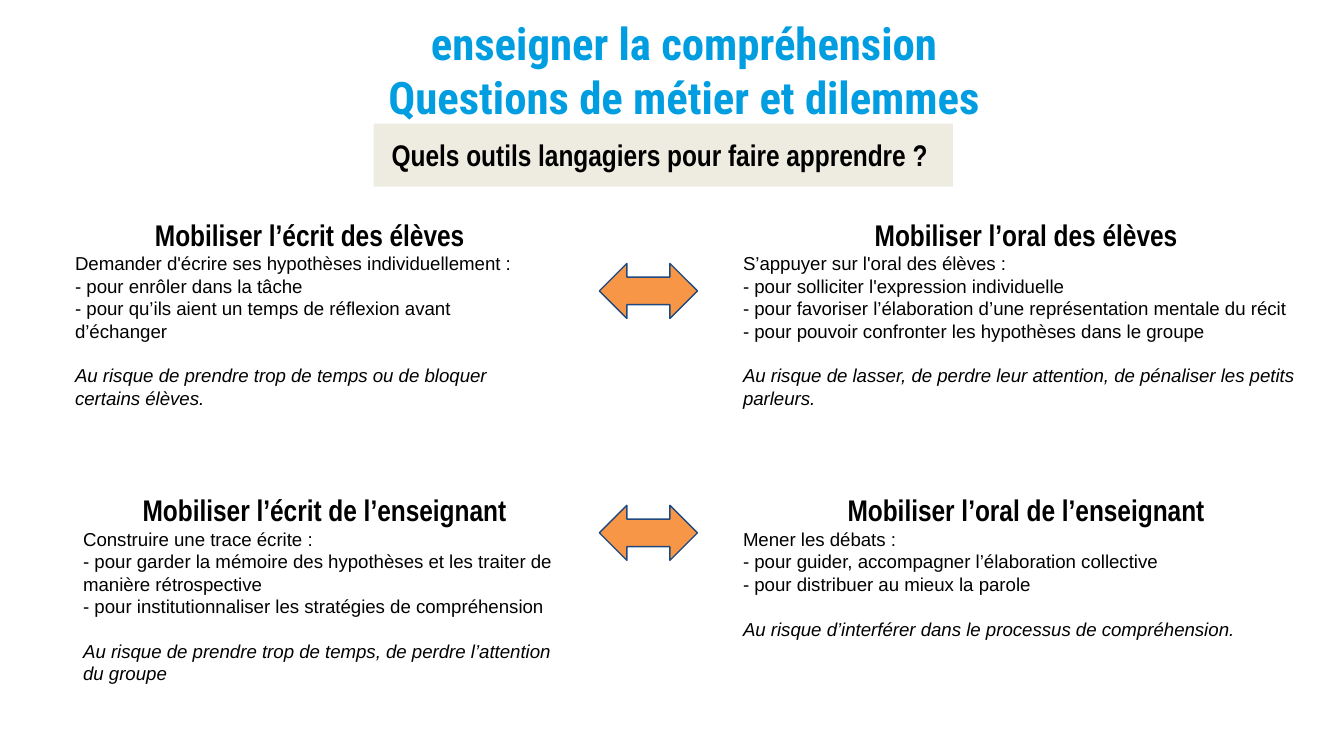
from dataclasses import dataclass

import pptx
import pptx.dml.color
import pptx.enum.shapes
import pptx.enum.text
import pptx.util

Inches = pptx.util.Inches
Pt = pptx.util.Pt
ALIGN = pptx.enum.text.PP_ALIGN
ANCHOR = pptx.enum.text.MSO_ANCHOR
SHAPE = pptx.enum.shapes.MSO_SHAPE

COLORS = {
    "title": "009EE0",
    "text": "000000",
    "banner": "EEECE1",
    "arrow": "F79646",
    "arrow_line": "1F497D",
}
TITLE = {"name": "Roboto Condensed", "size": Pt(24), "bold": True}
HEADING = {"name": "Arial Narrow", "size": Pt(16), "bold": True}
BODY = {"name": "Arial", "size": Pt(10), "bold": False}
RISK = {**BODY, "italic": True}

SLIDE_WIDTH = 10
SLIDE_HEIGHT = SLIDE_WIDTH * 9 / 16
RIGHT_COLUMN = 5.43
RIGHT_WIDTH = 4.41
TOP_ROW = 1.51
BOTTOM_ROW = 3.56


@dataclass
class Box:
    left: float
    top: float
    width: float
    height: float

    def lengths(self) -> list:
        return [Inches(value) for value in (self.left, self.top, self.width, self.height)]


@dataclass
class Line:
    text: str
    font: dict
    color: str = "text"
    alignment: ALIGN = ALIGN.LEFT
    space_before: float = 0


@dataclass
class Practice:
    box: Box
    heading: str
    actions: list[str]
    risk: str


PRACTICES = [
    Practice(
        Box(0.46, TOP_ROW, 3.69, 1.21),
        "Mobiliser l’écrit des élèves",
        [
            "Demander d'écrire ses hypothèses individuellement :",
            "- pour enrôler dans la tâche",
            "- pour qu’ils aient un temps de réflexion avant d’échanger",
        ],
        "Au risque de prendre trop de temps ou de bloquer certains élèves.",
    ),
    Practice(
        Box(RIGHT_COLUMN, TOP_ROW, RIGHT_WIDTH, 1.12),
        "Mobiliser l’oral des élèves",
        [
            "S’appuyer sur l'oral des élèves :",
            "- pour solliciter l'expression individuelle",
            "- pour favoriser l’élaboration d’une représentation mentale du récit",
            "- pour pouvoir confronter les hypothèses dans le groupe",
        ],
        "Au risque de lasser, de perdre leur attention, de pénaliser les petits parleurs.",
    ),
    Practice(
        Box(0.52, BOTTOM_ROW, 3.79, 1.21),
        "Mobiliser l’écrit de l’enseignant",
        [
            "Construire une trace écrite :",
            "- pour garder la mémoire des hypothèses et les traiter de manière rétrospective",
            "- pour institutionnaliser les stratégies de compréhension",
        ],
        "Au risque de prendre trop de temps, de perdre l’attention du groupe",
    ),
    Practice(
        Box(RIGHT_COLUMN, BOTTOM_ROW, RIGHT_WIDTH, 1.21),
        "Mobiliser l’oral de l’enseignant",
        [
            "Mener les débats :",
            "- pour guider, accompagner l’élaboration collective",
            "- pour distribuer au mieux la parole",
        ],
        "Au risque d’interférer dans le processus de compréhension.",
    ),
]


def rgb(color: str) -> pptx.dml.color.RGBColor:
    return pptx.dml.color.RGBColor.from_string(COLORS[color])


def apply(target, values: dict) -> None:
    for name, value in values.items():
        setattr(target, name, value)


def write_lines(shape, lines: list[Line], anchor=ANCHOR.TOP, vertical_margin: float = 0.1) -> None:
    frame = shape.text_frame
    apply(frame, {
        "word_wrap": True,
        "vertical_anchor": anchor,
        "margin_left": Inches(0.1),
        "margin_right": Inches(0.1),
        "margin_top": Inches(vertical_margin),
        "margin_bottom": Inches(vertical_margin),
    })
    for index, line in enumerate(lines):
        paragraph = frame.add_paragraph() if index else frame.paragraphs[0]
        paragraph.alignment = line.alignment
        if line.space_before:
            paragraph.space_before = Pt(line.space_before)
        run = paragraph.add_run()
        run.text = line.text
        apply(run.font, line.font)
        run.font.color.rgb = rgb(line.color)


def add_filled_shape(slide, kind, box: Box, fill: str):
    shape = slide.shapes.add_shape(kind, *box.lengths())
    shape.shadow.inherit = False
    shape.fill.solid()
    shape.fill.fore_color.rgb = rgb(fill)
    shape.line.fill.background()
    return shape


def add_title(slide) -> None:
    shape = slide.shapes.add_textbox(*Box(1.55, 0.21, 7.08, 0.61).lengths())
    texts = ["enseigner la compréhension", "Questions de métier et dilemmes"]
    lines = [Line(text, TITLE, "title", ALIGN.CENTER) for text in texts]
    write_lines(shape, lines, ANCHOR.MIDDLE, 0.05)


def add_banner(slide) -> None:
    shape = add_filled_shape(slide, SHAPE.RECTANGLE, Box(2.78, 0.92, 4.31, 0.47), "banner")
    text = "Quels outils langagiers pour faire apprendre ? "
    write_lines(shape, [Line(text, HEADING, alignment=ALIGN.CENTER)])


def add_practice(slide, practice: Practice) -> None:
    shape = slide.shapes.add_textbox(*practice.box.lengths())
    write_lines(shape, [
        Line(practice.heading, HEADING, alignment=ALIGN.CENTER),
        *[Line(action, BODY) for action in practice.actions],
        Line(practice.risk, RISK, space_before=12),
    ])


def add_arrow(slide, top: float) -> None:
    shape = add_filled_shape(slide, SHAPE.LEFT_RIGHT_ARROW, Box(4.46, top, 0.73, 0.41), "arrow")
    shape.line.color.rgb = rgb("arrow_line")
    shape.line.width = Pt(0.75)


def main() -> None:
    presentation = pptx.Presentation()
    presentation.slide_width = Inches(SLIDE_WIDTH)
    presentation.slide_height = Inches(SLIDE_HEIGHT)
    slide = presentation.slides.add_slide(presentation.slide_layouts[6])
    add_title(slide)
    add_banner(slide)
    for practice in PRACTICES:
        add_practice(slide, practice)
    for top in (1.96, 3.76):
        add_arrow(slide, top)
    presentation.save("out.pptx")


if __name__ == "__main__":
    main()
